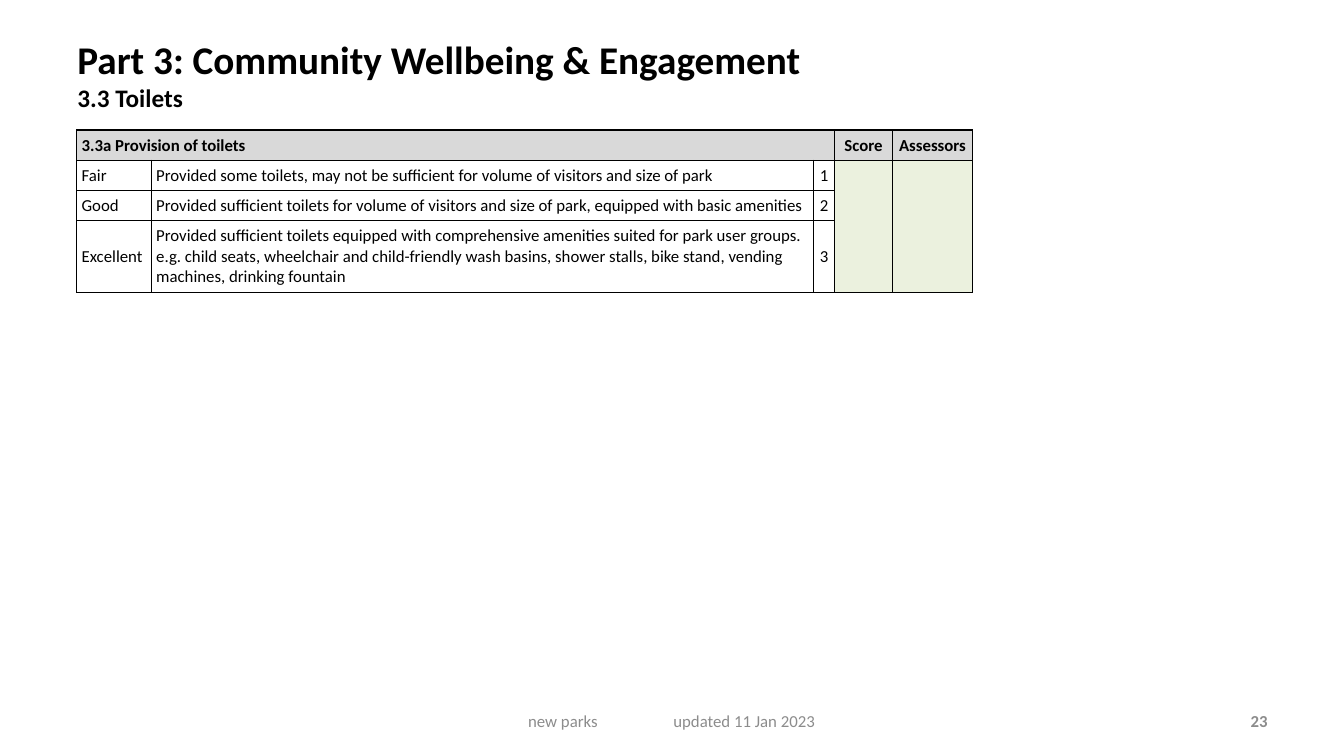
from pptx import Presentation
from pptx.dml.color import RGBColor
from pptx.enum import text
from pptx.oxml.ns import qn
from pptx.util import Inches, Pt
from lxml import etree

COLORS = {"ink": "000000", "muted": "8C8C8C", "header": "D9D9D9", "entry": "EBF1DE"}
LEFT, CENTER, RIGHT = text.PP_ALIGN.LEFT, text.PP_ALIGN.CENTER, text.PP_ALIGN.RIGHT
TOP, MIDDLE = text.MSO_ANCHOR.TOP, text.MSO_ANCHOR.MIDDLE


def add_span(para, words, size=12, color="ink", bold=False):
    span = para.add_run()
    span.text = words
    span.font.name = "Calibri"
    span.font.size = Pt(size)
    span.font.bold = bold
    span.font.color.rgb = RGBColor.from_string(COLORS[color])


def add_box(left, top, width, height, anchor, align):
    """Add a wrapping text box and return its first paragraph."""
    box = page.shapes.add_textbox(Inches(left), Inches(top), Inches(width), Inches(height))
    box.text_frame.word_wrap = True
    box.text_frame.vertical_anchor = anchor
    para = box.text_frame.paragraphs[0]
    para.alignment = align
    return para


deck = Presentation()
deck.slide_width, deck.slide_height = Inches(13.33), Inches(7.5)
page = deck.slides.add_slide(deck.slide_layouts[6])

# Title and section
title = add_box(0.67, 0.3, 10.36, 0.99, TOP, LEFT)
add_span(title, "Part 3: Community Wellbeing & Engagement", 28, bold=True)
title.add_line_break()
add_span(title, "3.3 Toilets", 18, bold=True)

# Scoring table
rows = [
    ["3.3a Provision of toilets", "", "", "Score", "Assessors"],
    ["Fair", "Provided some toilets, may not be sufficient for volume of visitors "
     "and size of park", "1", "", ""],
    ["Good", "Provided sufficient toilets for volume of visitors and size of park, "
     "equipped with basic amenities", "2", "", ""],
    ["Excellent", "Provided sufficient toilets equipped with comprehensive amenities "
     "suited for park user groups. e.g. child seats, wheelchair and child-friendly "
     "wash basins, shower stalls, bike stand, vending machines, drinking fountain",
     "3", "", ""],
]
widths = [0.74, 6.57, 0.21, 0.57, 0.8]
heights = [0.3, 0.3, 0.3, 0.71]
table = page.shapes.add_table(
    len(rows), len(widths), Inches(0.76), Inches(1.29),
    Inches(sum(widths)), Inches(sum(heights))).table
table.first_row = table.horz_banding = False
for column, width in zip(table.columns, widths):
    column.width = Inches(width)
for row, height in zip(table.rows, heights):
    row.height = Inches(height)

for r, row in enumerate(rows):
    for c, words in enumerate(row):
        cell = table.cell(r, c)
        cell.margin_left = cell.margin_right = Inches(0.05)
        cell.margin_top = cell.margin_bottom = Inches(0.05)
        cell.vertical_anchor = MIDDLE
        para = cell.text_frame.paragraphs[0]
        para.alignment = CENTER if c >= 2 else LEFT
        if words:
            add_span(para, words, bold=r == 0)
        else:
            etree.SubElement(para._p, qn("a:endParaRPr"), sz="1200")

        properties = cell._tc.get_or_add_tcPr()
        for side in ("lnL", "lnR", "lnT", "lnB"):
            border = etree.SubElement(properties, qn(f"a:{side}"), w=str(Pt(1)))
            fill = etree.SubElement(border, qn("a:solidFill"))
            etree.SubElement(fill, qn("a:srgbClr"), val=COLORS["ink"])
        if r == 0 or c >= 3:
            cell.fill.solid()
            shade = COLORS["header" if r == 0 else "entry"]
            cell.fill.fore_color.rgb = RGBColor.from_string(shade)
        else:
            cell.fill.background()

table.cell(0, 0).merge(table.cell(0, 2))
for c in (3, 4):
    table.cell(1, c).merge(table.cell(3, c))

# Footer and page number
footer = add_box(4.56, 6.95, 4.22, 0.4, MIDDLE, LEFT)
stops = etree.SubElement(footer._p.get_or_add_pPr(), qn("a:tabLst"))
for position in (0.58, 2.02):
    etree.SubElement(stops, qn("a:tab"), pos=str(Inches(position)), algn="l")
add_span(footer, "\tnew parks\tupdated 11 Jan 2023", color="muted")

number = add_box(9.56, 6.95, 3.11, 0.4, MIDDLE, RIGHT)
add_span(number, "23", color="muted", bold=True)

deck.save("out.pptx")
